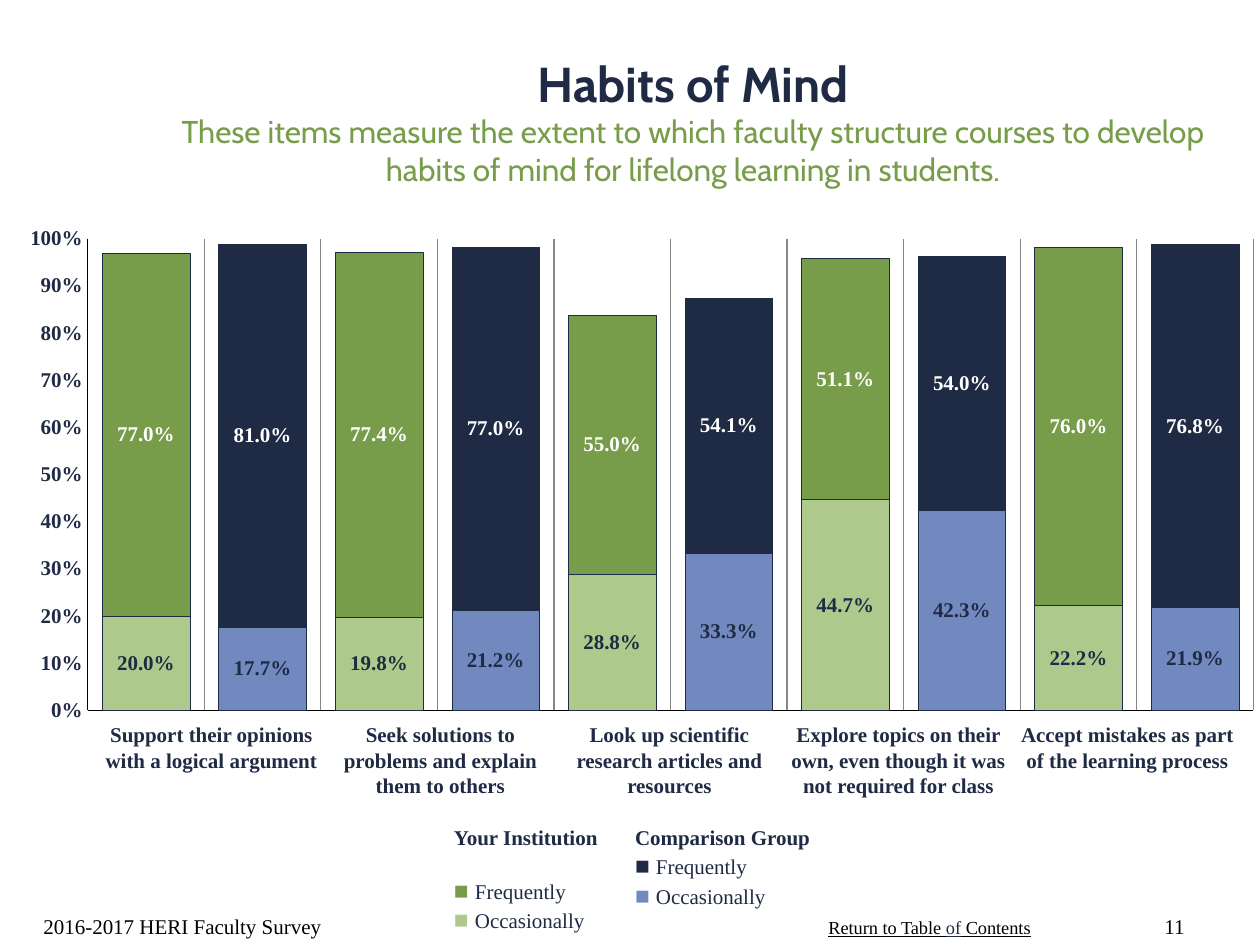
from lxml import etree
from pptx import Presentation
from pptx import util as u
from pptx.chart.data import CategoryChartData
from pptx.dml.color import RGBColor
from pptx.enum import chart as ch, text as t
from pptx.oxml import parse_xml
from pptx.oxml.ns import nsdecls

PX = 914400 / 126
NAVY, GREEN, LIME, BLUE = "1F2A44", "789D4A", "AFC98D", "7289BF"
SERIF = "Times New Roman"
color = RGBColor.from_string


def add_frame(left, top, width, height, anchor=t.MSO_ANCHOR.TOP, inset=True, wrap=True):
    box = slide.shapes.add_textbox(*(round(n * PX) for n in (left, top, width, height)))
    frame = box.text_frame
    frame.word_wrap = wrap
    frame.vertical_anchor = anchor
    if not inset:
        frame.margin_left = frame.margin_right = frame.margin_top = frame.margin_bottom = 0
    return frame


def write(paragraph, text, size=12, fill=NAVY, font=SERIF, bold=False, underline=None, align=None):
    run = paragraph.add_run()
    run.text = text
    run.font.size = u.Pt(size)
    run.font.name = font
    run.font.bold = bold
    run.font.underline = underline
    run.font.color.rgb = color(fill)
    if align is not None:
        paragraph.alignment = align


prs = Presentation()
prs.slide_width, prs.slide_height = round(1260 * PX), round(945 * PX)
slide = prs.slides.add_slide(prs.slide_layouts[6])
CENTER, BOTTOM = t.PP_ALIGN.CENTER, t.MSO_ANCHOR.BOTTOM

contents_link = add_frame(816, 910, 229, 35, wrap=False).paragraphs[0]
for words, fill in (("Return to Table ", "000000"), ("of", NAVY), (" Contents", "000000")):
    write(contents_link, words, size=10.5, fill=fill, underline=True)

page_number = add_frame(1134, 882, 63, 63, anchor=BOTTOM).paragraphs[0]
write(page_number, "11", fill="000000", align=t.PP_ALIGN.RIGHT)

occasionally = (0.2, 0.177, 0.198, 0.212, 0.288, 0.333, 0.447, 0.423, 0.222, 0.219)
frequently = (0.77, 0.81, 0.774, 0.77, 0.55, 0.541, 0.511, 0.54, 0.76, 0.768)
ratings = CategoryChartData(number_format="0.0%")
ratings.categories = [str(n) for n in range(1, 11)]
ratings.add_series("Series 1", occasionally)
ratings.add_series("Series 2", frequently)
habits = slide.shapes.add_chart(
    ch.XL_CHART_TYPE.COLUMN_STACKED, *(round(n * PX) for n in (8, 220, 1246, 504)), ratings
).chart
habits.has_legend = False
habits.has_title = False
habits.font.name = SERIF
habits.font.size = u.Pt(12)
habits.font.bold = True
habits.font.color.rgb = color(NAVY)

items = habits.category_axis
items.tick_label_position = ch.XL_TICK_LABEL_POSITION.NONE
items.has_major_gridlines = True
items.major_gridlines.format.line.color.rgb = color("868686")
items.major_gridlines.format.line.width = u.Pt(0.75)
percent = habits.value_axis
percent.minimum_scale, percent.maximum_scale, percent.major_unit = 0, 1, 0.1
percent.has_major_gridlines = False
percent.tick_labels.number_format = "0%"
percent.tick_labels.number_format_is_linked = False
for axis, width in ((items, 0), (percent, 0.19)):
    axis.major_tick_mark = axis.minor_tick_mark = ch.XL_TICK_MARK.NONE
    axis.format.line.color.rgb = color("000000")
    axis.format.line.width = u.Pt(width)

columns = habits.plots[0]
columns.gap_width, columns.overlap = 33, 100
columns.vary_by_categories = False
for series, own, comparison, label_fill in zip(
    columns.series, (LIME, GREEN), (BLUE, NAVY), (NAVY, "FFFFFF")
):
    bars = [(series, own)] + [(series.points[i], comparison) for i in range(1, 10, 2)]
    for bar, fill in bars:
        bar.format.fill.solid()
        bar.format.fill.fore_color.rgb = color(fill)
        bar.format.line.color.rgb = color(NAVY)
        bar.format.line.width = u.Pt(0.25)
    labels = series.data_labels
    labels.show_value = True
    labels.number_format = "0.0%"
    labels.number_format_is_linked = False
    labels.font.name = SERIF
    labels.font.size = u.Pt(12)
    labels.font.bold = True
    labels.font.color.rgb = color(label_fill)

plot_area = habits.element.chart.plotArea
for layout in plot_area.findall("{*}layout"):
    plot_area.remove(layout)
layout = parse_xml(f"<c:layout {nsdecls('c')}><c:manualLayout/></c:layout>")
for tag, value in (
    ("layoutTarget", "inner"), ("xMode", "edge"), ("yMode", "edge"),
    ("x", "0.064"), ("y", "0.037"), ("w", "0.936"), ("h", "0.936"),
):
    namespace = etree.QName(layout).namespace
    etree.SubElement(layout[0], f"{{{namespace}}}{tag}").set("val", value)
plot_area.insert(0, layout)

questions = (
    ("Support their opinions with a logical argument",),
    ("Seek solutions to", "problems and explain them to others"),
    ("Look up scientific research articles and resources",),
    ("Explore topics on their own, even though it was not required for class",),
    ("Accept mistakes as part of the learning process",),
)
for i, lines in enumerate(questions):
    question = add_frame(97 + 229 * i, 722, 229, 76, inset=False)
    for n, line in enumerate(lines):
        paragraph = question.add_paragraph() if n else question.paragraphs[0]
        write(paragraph, line, bold=True, align=CENTER)

heading = add_frame(126, 21, 1134, 199, anchor=t.MSO_ANCHOR.MIDDLE)
write(heading.paragraphs[0], "Habits of Mind", size=28, font="Cabin", bold=True, align=CENTER)
write(
    heading.add_paragraph(),
    "These items measure the extent to which faculty structure courses to develop "
    "habits of mind for lifelong learning in students.",
    size=18, fill=GREEN, font="Cabin", align=CENTER,
)

for left, group, fills, gap in (
    (454, "Your Institution", (GREEN, LIME), 14),
    (635, "Comparison Group", (NAVY, BLUE), 0),
):
    key = add_frame(left, 825, 181, 110, inset=False)
    write(key.paragraphs[0], group, bold=True)
    for answer, fill, space in zip(("Frequently", "Occasionally"), fills, (gap, 0)):
        entry = key.add_paragraph()
        entry.space_before = u.Pt(space)
        write(entry, "■ ", size=14, fill=fill)
        write(entry, answer)

survey = add_frame(31, 882, 399, 63, anchor=BOTTOM).paragraphs[0]
write(survey, "2016-2017 HERI Faculty Survey", fill="000000")

prs.save("out.pptx")
